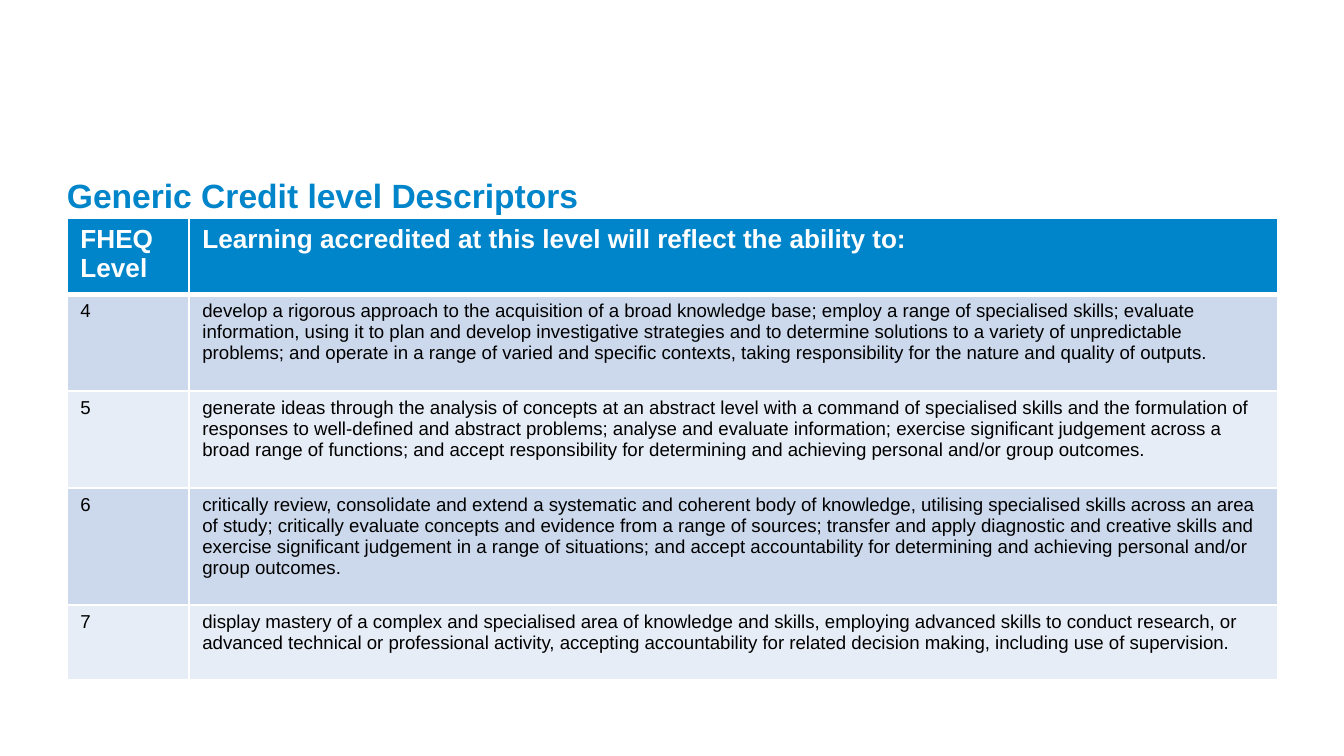
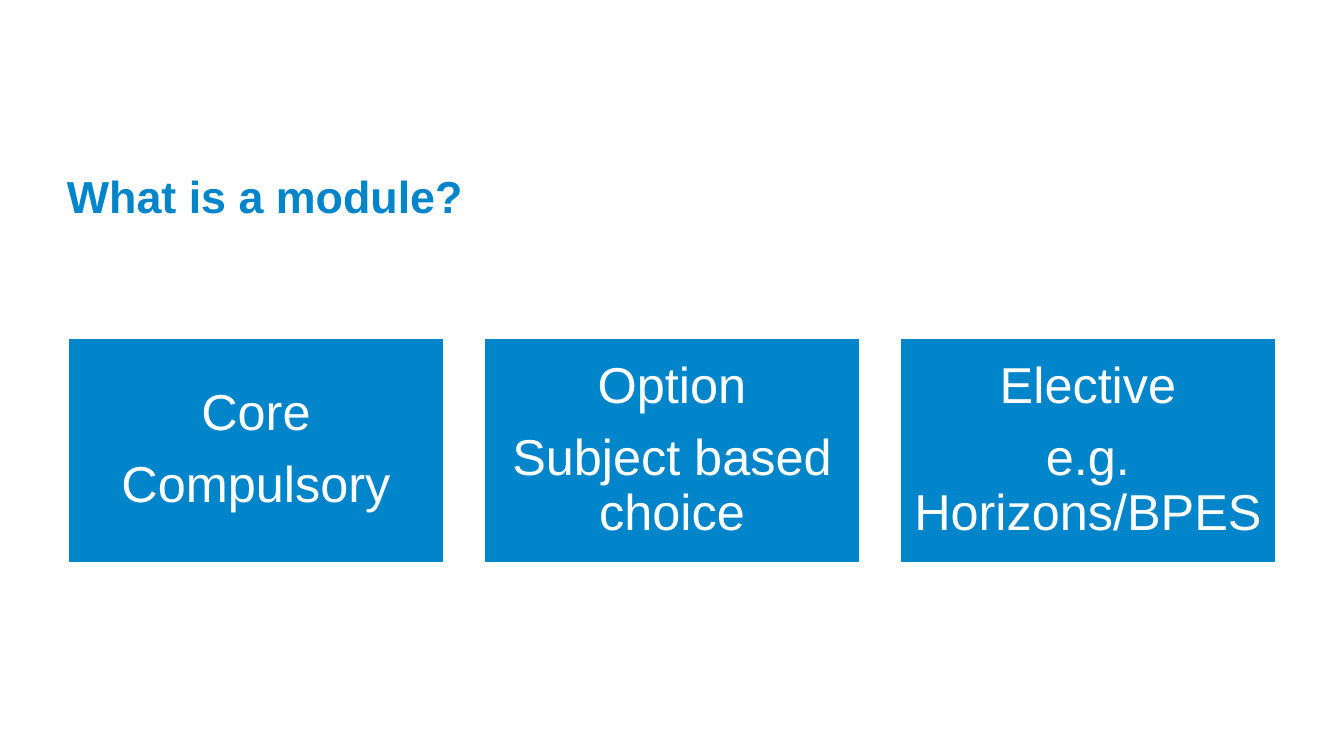
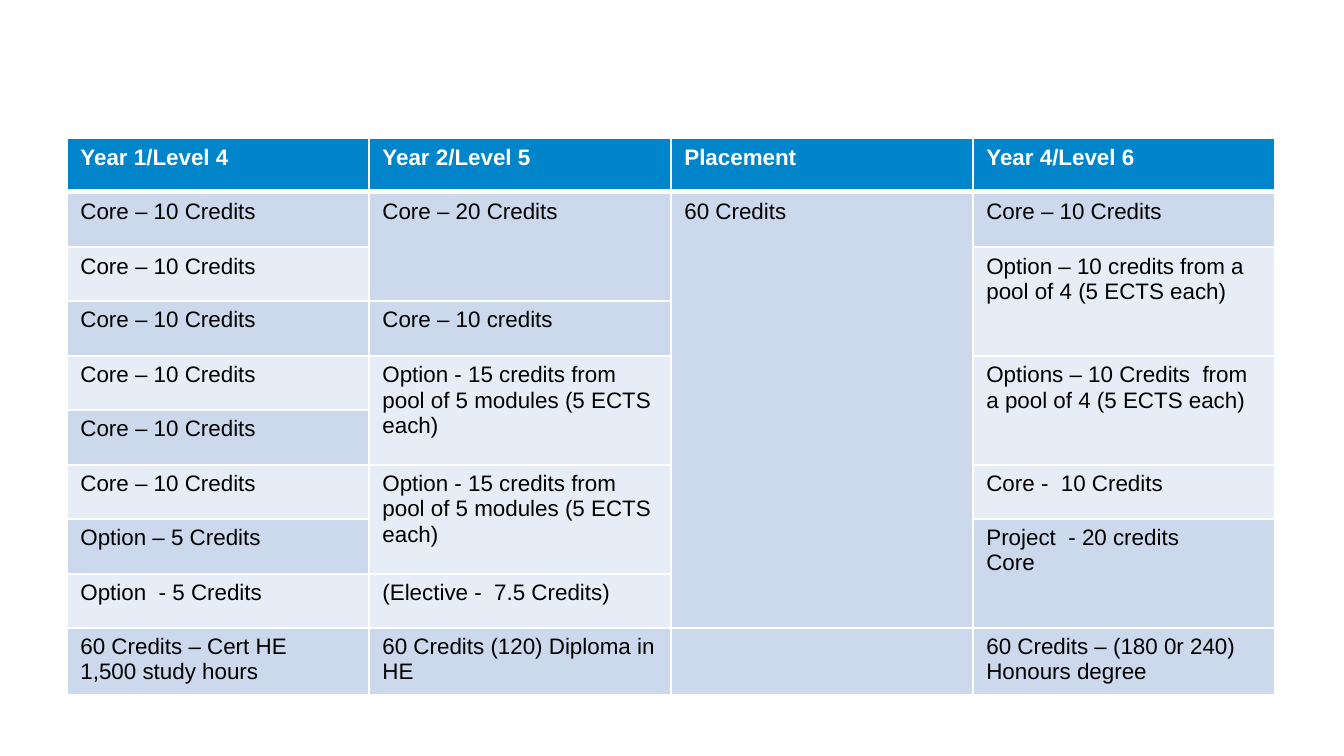
import pptx
import pptx.dml.color
import pptx.enum.shapes
import pptx.enum.text
import pptx.oxml.ns
import pptx.util
from lxml import etree

EMU_PER_PX = 914400 / 134.4
FONT = "Arial"
LEFT = 67
COLOURS = {
    "brand": "0085CA",
    "white": "FFFFFF",
    "text": "000000",
    "band_dark": "CCD9EC",
    "band_light": "E7EDF6",
}

DESCRIPTORS = [
    ["FHEQ Level", "Learning accredited at this level will reflect the ability to:"],
    ["4", "develop a rigorous approach to the acquisition of a broad knowledge base; "
          "employ a range of specialised skills; evaluate information, using it to plan and "
          "develop investigative strategies and to determine solutions to a variety of "
          "unpredictable problems; and operate in a range of varied and specific contexts, "
          "taking responsibility for the nature and quality of outputs."],
    ["5", "generate ideas through the analysis of concepts at an abstract level with a command "
          "of specialised skills and the formulation of responses to well-defined and abstract "
          "problems; analyse and evaluate information; exercise significant judgement across a "
          "broad range of functions; and accept responsibility for determining and achieving "
          "personal and/or group outcomes."],
    ["6", "critically review, consolidate and extend a systematic and coherent body of "
          "knowledge, utilising specialised skills across an area of study; critically evaluate "
          "concepts and evidence from a range of sources; transfer and apply diagnostic and "
          "creative skills and exercise significant judgement in a range of situations; and "
          "accept accountability for determining and achieving personal and/or group outcomes."],
    ["7", "display mastery of a complex and specialised area of knowledge and skills, employing "
          "advanced skills to conduct research, or advanced technical or professional activity, "
          "accepting accountability for related decision making, including use of supervision."],
]

MODULE_TYPES = [
    ["Core", "Compulsory"],
    ["Option", "Subject based choice"],
    ["Elective", "e.g. Horizons/BPES"],
]

CORE = "Core – 10 Credits"
POOL = "Option - 15 credits from pool of 5 modules (5 ECTS each)"
# None continues the cell above.
PROGRAMME = [
    ["Year 1/Level 4", "Year 2/Level 5", "Placement", "Year 4/Level 6"],
    [CORE, "Core – 20 Credits", "60 Credits", CORE],
    [CORE, None, None, "Option – 10 credits from a pool of 4 (5 ECTS each)"],
    [CORE, "Core – 10 credits", None, None],
    [CORE, POOL, None, "Options – 10 Credits  from a pool of 4 (5 ECTS each)"],
    [CORE, None, None, None],
    [CORE, POOL, None, "Core -  10 Credits"],
    ["Option – 5 Credits", None, None, "Project  - 20 credits\nCore"],
    ["Option  - 5 Credits", "(Elective -  7.5 Credits)", None, None],
    ["60 Credits – Cert HE\n1,500 study hours", "60 Credits (120) Diploma in HE", "",
     "60 Credits – (180 0r 240)\nHonours degree"],
]


def px(length):
    return pptx.util.Emu(round(length * EMU_PER_PX))


def colour(name):
    return pptx.dml.color.RGBColor.from_string(COLOURS[name])


def style_font(paragraph, size, colour_name, bold=False):
    paragraph.font.name = FONT
    paragraph.font.size = pptx.util.Pt(size)
    paragraph.font.bold = bold
    paragraph.font.color.rgb = colour(colour_name)


def set_margins(frame, left, top, right, bottom):
    frame.margin_left, frame.margin_top = px(left), px(top)
    frame.margin_right, frame.margin_bottom = px(right), px(bottom)


def add_title(slide, text, size):
    box = slide.shapes.add_textbox(px(LEFT), px(164), px(1210), px(56))
    frame = box.text_frame
    frame.word_wrap = True
    frame.vertical_anchor = pptx.enum.text.MSO_ANCHOR.MIDDLE
    set_margins(frame, 0, 7, 0, 0)
    frame.text = text
    style_font(frame.paragraphs[0], size, "brand", True)


def set_borders(cell, row):
    properties = cell._tc.get_or_add_tcPr()
    widths = {"lnL": 1, "lnR": 1, "lnT": 3 if row == 1 else 1, "lnB": 3 if row == 0 else 1}
    for index, (tag, width) in enumerate(widths.items()):
        line = etree.Element(pptx.oxml.ns.qn("a:" + tag), w=str(pptx.util.Pt(width)))
        fill = etree.SubElement(line, pptx.oxml.ns.qn("a:solidFill"))
        etree.SubElement(fill, pptx.oxml.ns.qn("a:srgbClr"), val=COLOURS["white"])
        properties.insert(index, line)


def style_cell(cell, row, size):
    band = "brand" if row == 0 else "band_dark" if row % 2 else "band_light"
    cell.fill.solid()
    cell.fill.fore_color.rgb = colour(band)
    set_borders(cell, row)
    for paragraph in cell.text_frame.paragraphs:
        style_font(paragraph, size, "text" if row else "white", row == 0)


def add_grid(slide, top, widths, heights, rows, header_size, body_size):
    frame = slide.shapes.add_table(len(rows), len(widths), px(LEFT), px(top),
                                   px(sum(widths)), px(sum(heights)))
    table = frame.table
    table.horz_banding = False
    for column, width in zip(table.columns, widths):
        column.width = px(width)
    for table_row, height in zip(table.rows, heights):
        table_row.height = px(height)
    for column in range(len(widths)):
        origin = 0
        for row, texts in enumerate(rows):
            cell = table.cell(row, column)
            if texts[column] is not None:
                origin = row
                cell.text = texts[column]
            style_cell(cell, origin, body_size if row else header_size)
            following = rows[row + 1][column] if row + 1 < len(rows) else ""
            if row > origin and following is not None:
                table.cell(origin, column).merge(cell)


def add_module_box(slide, left, lines):
    shape = slide.shapes.add_shape(pptx.enum.shapes.MSO_SHAPE.RECTANGLE,
                                   px(left), px(337), px(378), px(227))
    shape.shadow.inherit = False
    shape.fill.solid()
    shape.fill.fore_color.rgb = colour("brand")
    shape.line.color.rgb = colour("white")
    shape.line.width = pptx.util.Pt(2)
    frame = shape.text_frame
    frame.word_wrap = True
    frame.vertical_anchor = pptx.enum.text.MSO_ANCHOR.MIDDLE
    set_margins(frame, 14, 14, 14, 14)
    frame.text = "\n".join(lines)
    for paragraph in frame.paragraphs:
        paragraph.alignment = pptx.enum.text.PP_ALIGN.CENTER
        paragraph.line_spacing = 0.9
        paragraph.space_after = pptx.util.Pt(9.45)
        style_font(paragraph, 27, "white")


def main():
    presentation = pptx.Presentation()
    presentation.slide_width, presentation.slide_height = px(1344), px(756)
    blank = presentation.slide_layouts[6]

    descriptors = presentation.slides.add_slide(blank)
    add_title(descriptors, "Generic Credit level Descriptors", 18)
    add_grid(descriptors, 218, [122, 1089], [72, 97, 97, 117, 75], DESCRIPTORS, 14, 10)

    modules = presentation.slides.add_slide(blank)
    add_title(modules, "What is a module?", 24)
    for index, lines in enumerate(MODULE_TYPES):
        add_module_box(modules, LEFT + index * 416, lines)

    programme = presentation.slides.add_slide(blank)
    add_grid(programme, 138, [302] * 4, [54, 55] * 4 + [54, 63], PROGRAMME, 12, 12)

    presentation.save("out.pptx")


if __name__ == "__main__":
    main()
